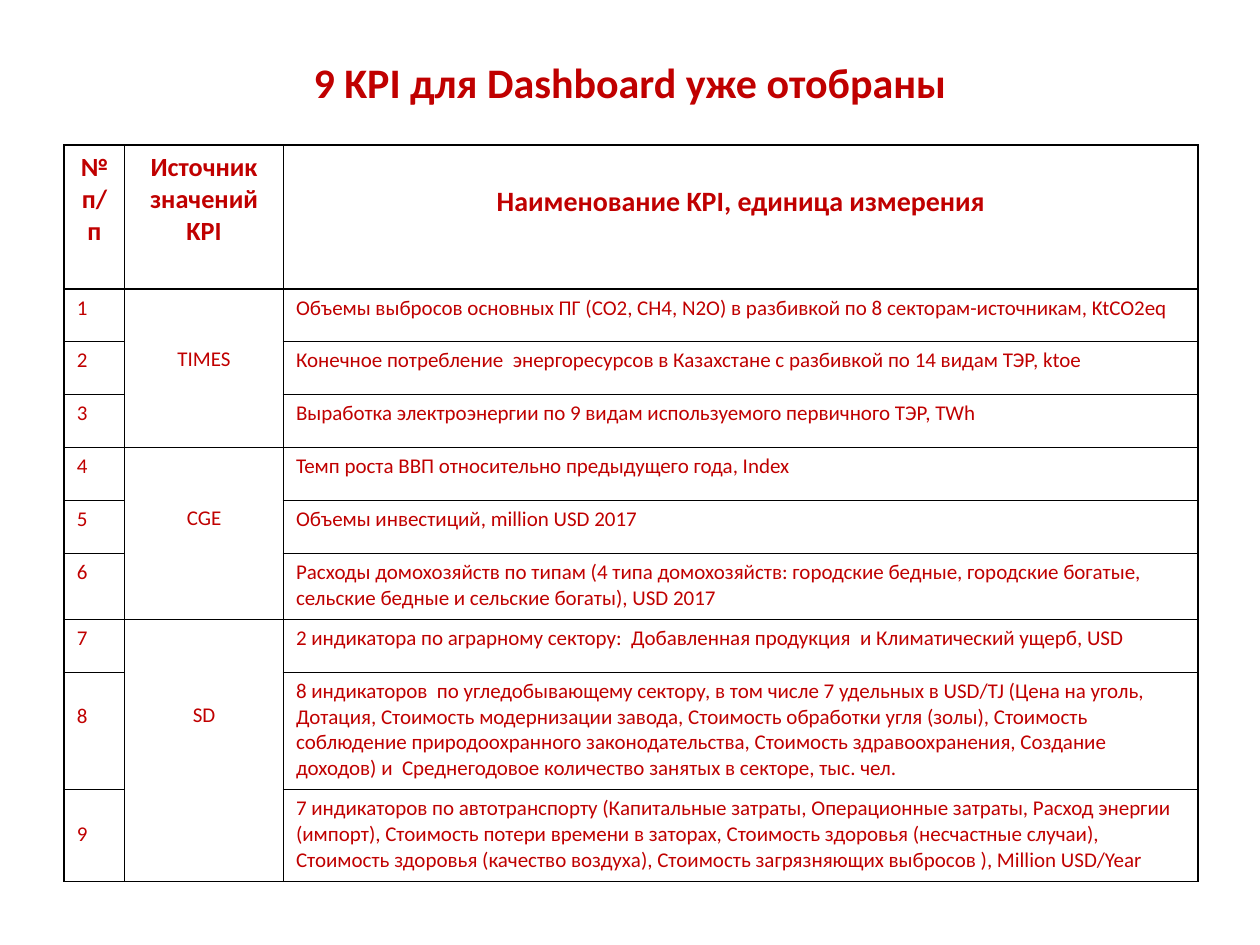
from dataclasses import dataclass

from lxml import etree
from pptx import Presentation
from pptx.dml.color import RGBColor
from pptx.enum.text import MSO_ANCHOR, PP_ALIGN
from pptx.oxml.ns import qn
from pptx.util import Inches, Pt

CENTER, LEFT = PP_ALIGN.CENTER, PP_ALIGN.LEFT
MIDDLE, TOP = MSO_ANCHOR.MIDDLE, MSO_ANCHOR.TOP
TITLE_ONLY = 5


@dataclass(frozen=True)
class Theme:
    font: str = "Calibri"
    red: RGBColor = RGBColor(0xC0, 0x00, 0x00)
    white: RGBColor = RGBColor(0xFF, 0xFF, 0xFF)
    border: str = "000000"
    title: int = 24
    heading: int = 15
    wide_heading: int = 16
    body: int = 12


THEME = Theme()
COLUMN_WIDTHS = [0.48, 1.26, 7.26]
ROW_HEIGHTS = [1.14, 0.42, 0.42, 0.42, 0.42, 0.42, 0.52, 0.42, 0.93, 0.73]
CELL_MARGIN = 0.05
HEADINGS = [
    ("№ п/п", THEME.heading, CELL_MARGIN),
    ("Источник значений KPI", THEME.heading, CELL_MARGIN),
    ("Наименование KPI, единица измерения", THEME.wide_heading, 0.32),
]
SOURCES = [("TIMES", 0.46), ("CGE", 0.46), ("SD", 0.66)]
ROWS_PER_SOURCE = 3
LOWERED_NUMBERS = {8: 0.25, 9: 0.25}
INDICATORS = [
    "Объемы выбросов основных ПГ (CO2, CH4, N2O) в разбивкой по 8 "
    "секторам-источникам, KtCO2eq",
    "Конечное потребление  энергоресурсов в Казахстане с разбивкой по 14 "
    "видам ТЭР, ktoe",
    "Выработка электроэнергии по 9 видам используемого первичного ТЭР, TWh",
    "Темп роста ВВП относительно предыдущего года, Index",
    "Объемы инвестиций, million USD 2017",
    "Расходы домохозяйств по типам (4 типа домохозяйств: городские бедные, "
    "городские богатые, сельские бедные и сельские богаты), USD 2017",
    "2 индикатора по аграрному сектору:  Добавленная продукция  и "
    "Климатический ущерб, USD",
    "8 индикаторов  по угледобывающему сектору, в том числе 7 удельных в "
    "USD/TJ (Цена на уголь, Дотация, Стоимость модернизации завода, Стоимость "
    "обработки угля (золы), Стоимость соблюдение природоохранного "
    "законодательства, Стоимость здравоохранения, Создание доходов) и  "
    "Среднегодовое количество занятых в секторе, тыс. чел.",
    "7 индикаторов по автотранспорту (Капитальные затраты, Операционные "
    "затраты, Расход энергии (импорт), Стоимость потери времени в заторах, "
    "Стоимость здоровья (несчастные случаи), Стоимость здоровья (качество "
    "воздуха), Стоимость загрязняющих выбросов ), Million USD/Year",
]


def write(frame, text, size, bold=False, align=LEFT):
    para = frame.paragraphs[0]
    para.alignment = align
    span = para.add_run()
    span.text = text
    span.font.name = THEME.font
    span.font.size = Pt(size)
    span.font.bold = bold
    span.font.color.rgb = THEME.red


def style_cell(cell):
    cell.fill.solid()
    cell.fill.fore_color.rgb = THEME.white
    cell.vertical_anchor = TOP
    properties = cell._tc.get_or_add_tcPr()
    for index, side in enumerate(("lnL", "lnR", "lnT", "lnB")):
        line = etree.Element(qn(f"a:{side}"), w=str(Pt(1)))
        fill = etree.SubElement(line, qn("a:solidFill"))
        etree.SubElement(fill, qn("a:srgbClr"), val=THEME.border)
        properties.insert(index, line)


def fill_cell(cell, text, size=THEME.body, bold=False, align=LEFT, top=CELL_MARGIN):
    cell.margin_top = Inches(top)
    write(cell.text_frame, text, size, bold, align)


def place_title(page, left, top, width, height):
    title = page.shapes.title
    title.left, title.top = Inches(left), Inches(top)
    title.width, title.height = Inches(width), Inches(height)
    title.text_frame.vertical_anchor = MIDDLE
    write(title.text_frame, "9 KPI для Dashboard уже отобраны", THEME.title, True, CENTER)


def place_indicator_table(page, left, top, width, height):
    box = page.shapes.add_table(
        len(ROW_HEIGHTS), len(COLUMN_WIDTHS),
        Inches(left), Inches(top), Inches(width), Inches(height),
    )
    table = box.table
    table.horz_banding = False
    for column, share in zip(table.columns, COLUMN_WIDTHS):
        column.width = Inches(width * share / sum(COLUMN_WIDTHS))
    for row, share in zip(table.rows, ROW_HEIGHTS):
        row.height = Inches(height * share / sum(ROW_HEIGHTS))
    for cell in table.iter_cells():
        style_cell(cell)

    for column, (text, size, margin) in enumerate(HEADINGS):
        fill_cell(table.cell(0, column), text, size, True, CENTER, margin)
    for number, text in enumerate(INDICATORS, start=1):
        margin = LOWERED_NUMBERS.get(number, CELL_MARGIN)
        fill_cell(table.cell(number, 0), str(number), top=margin)
        fill_cell(table.cell(number, 2), text)
    for index, (text, margin) in enumerate(SOURCES):
        first = 1 + index * ROWS_PER_SOURCE
        cell = table.cell(first, 1)
        cell.merge(table.cell(first + ROWS_PER_SOURCE - 1, 1))
        fill_cell(cell, text, align=CENTER, top=margin)


def main():
    deck = Presentation()
    deck.slide_width, deck.slide_height = Inches(10), Inches(7.5)
    page = deck.slides.add_slide(deck.slide_layouts[TITLE_ONLY])
    place_title(page, 0.5, 0.3, 9, 0.69)
    place_indicator_table(page, 0.51, 1.15, 9, 5.85)
    deck.save("out.pptx")


if __name__ == "__main__":
    main()
